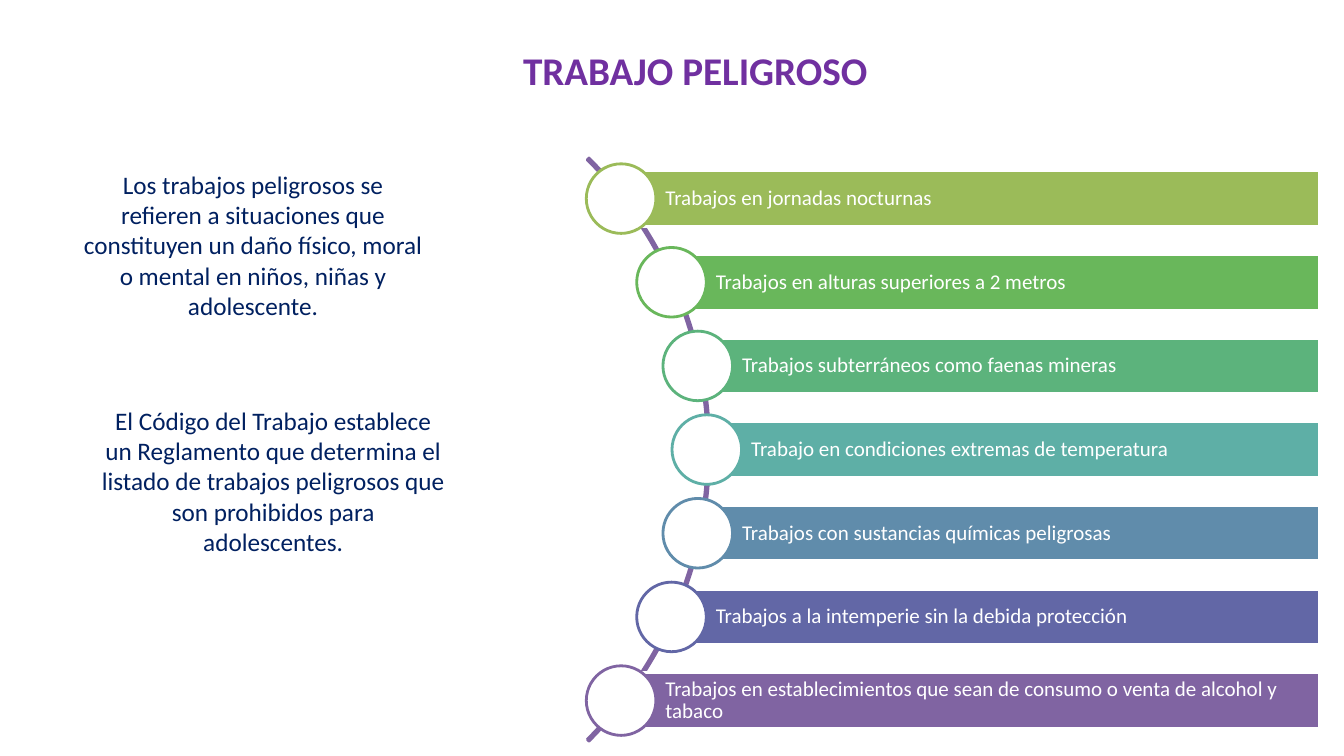
"""Build the slide on dangerous work, with its fan of seven kinds of prohibited work."""
import math

from pptx import Presentation
from pptx import util as u
from pptx.dml import color
from pptx.enum import shapes, text

PX = 9144
FONT = "Calibri"
COLORS = {
    "title": "7030A0",
    "body": "002060",
    "white": "FFFFFF",
    "arc": "8064A2",
}
WORKS = [
    ("Trabajos en jornadas nocturnas", "9BBB59"),
    ("Trabajos en alturas superiores a 2 metros", "69B75B"),
    ("Trabajos subterráneos como faenas mineras", "5CB37C"),
    ("Trabajo en condiciones extremas de temperatura", "5EAFA6"),
    ("Trabajos con sustancias químicas peligrosas", "608CAB"),
    ("Trabajos a la intemperie sin la debida protección", "6267A6"),
    ("Trabajos en establecimientos que sean de consumo o venta de alcohol y tabaco", "8064A2"),
]
NOTES = [
    (71, 163, "Los trabajos peligrosos se refieren a situaciones que constituyen "
              "un daño físico, moral o mental en niños, niñas y adolescente."),
    (91, 397, "El Código del Trabajo establece un Reglamento que determina el listado "
              "de trabajos peligrosos que son prohibidos para adolescentes."),
]
ARC_X, ARC_Y, ARC_SIZE = 295, 446, 818
CURVE_RADIUS, ROW_PITCH = 406, 83
BAR_RIGHT, BAR_HEIGHT, CIRCLE_SIZE = 1309, 55, 69


def px(*lengths):
    """Turn pixel lengths into EMU."""
    return [u.Emu(round(length * PX)) for length in lengths]


def rgb(value):
    """Return the colour of a hex string."""
    return color.RGBColor.from_string(value)


def write(shape, content, size, hue, align, bold=False):
    """Write one formatted paragraph into a shape."""
    frame = shape.text_frame
    frame.word_wrap = True
    frame.text = content
    paragraph = frame.paragraphs[0]
    paragraph.alignment = align
    font = paragraph.font
    font.name, font.size, font.bold = FONT, u.Pt(size), bold
    font.color.rgb = rgb(hue)
    return frame


def add_outlined(slide, kind, box, fill, line):
    """Add a preset shape with a two-point outline."""
    shape = slide.shapes.add_shape(kind, *px(*box))
    shape.shadow.inherit = False
    if fill:
        shape.fill.solid()
        shape.fill.fore_color.rgb = rgb(fill)
    else:
        shape.fill.background()
    shape.line.color.rgb = rgb(line)
    shape.line.width = u.Pt(2)
    return shape


def add_arc(slide):
    """Add the thin arc that joins the circles."""
    box = (ARC_X - ARC_SIZE / 2, ARC_Y - ARC_SIZE / 2, ARC_SIZE, ARC_SIZE)
    arc = add_outlined(slide, shapes.MSO_SHAPE.BLOCK_ARC, box, None, COLORS["arc"])
    for index, value in enumerate((189, 27, 0.003)):
        arc.adjustments[index] = value


def add_work(slide, row, content, hue):
    """Add a coloured bar and the circle at its left end, placed on the curve."""
    offset = (row - (len(WORKS) - 1) / 2) * ROW_PITCH
    x = round(ARC_X + math.sqrt(CURVE_RADIUS ** 2 - offset ** 2))
    y = ARC_Y + offset
    bar_box = (x, y - BAR_HEIGHT / 2, BAR_RIGHT - x, BAR_HEIGHT)
    bar = add_outlined(slide, shapes.MSO_SHAPE.RECTANGLE, bar_box, hue, COLORS["white"])
    frame = write(bar, content, 15, COLORS["white"], text.PP_ALIGN.LEFT)
    frame.vertical_anchor = text.MSO_ANCHOR.MIDDLE
    frame.margin_left, frame.margin_top, frame.margin_right, frame.margin_bottom = px(44, 4, 4, 4)
    frame.paragraphs[0].line_spacing = 0.9
    circle_box = (x - CIRCLE_SIZE / 2, y - CIRCLE_SIZE / 2, CIRCLE_SIZE, CIRCLE_SIZE)
    add_outlined(slide, shapes.MSO_SHAPE.OVAL, circle_box, COLORS["white"], hue)


def add_title(slide, content):
    """Place and format the slide title."""
    title = slide.shapes.title
    title.left, title.top, title.width, title.height = px(23, 41, 1333, 57)
    frame = write(title, content, 28, COLORS["title"], text.PP_ALIGN.CENTER, bold=True)
    frame.vertical_anchor = text.MSO_ANCHOR.TOP
    frame.auto_size = text.MSO_AUTO_SIZE.SHAPE_TO_FIT_TEXT


def add_note(slide, left, top, content):
    """Add a centred block of running text."""
    note = slide.shapes.add_textbox(*px(left, top, 360, 162))
    frame = write(note, content, 18, COLORS["body"], text.PP_ALIGN.CENTER)
    frame.auto_size = text.MSO_AUTO_SIZE.SHAPE_TO_FIT_TEXT


def main():
    """Build and save the presentation."""
    presentation = Presentation()
    presentation.slide_width, presentation.slide_height = px(1333, 750)
    slide = presentation.slides.add_slide(presentation.slide_layouts[5])
    add_title(slide, "TRABAJO PELIGROSO")
    add_arc(slide)
    for row, (content, hue) in enumerate(WORKS):
        add_work(slide, row, content, hue)
    for left, top, content in NOTES:
        add_note(slide, left, top, content)
    presentation.save("out.pptx")


if __name__ == "__main__":
    main()
